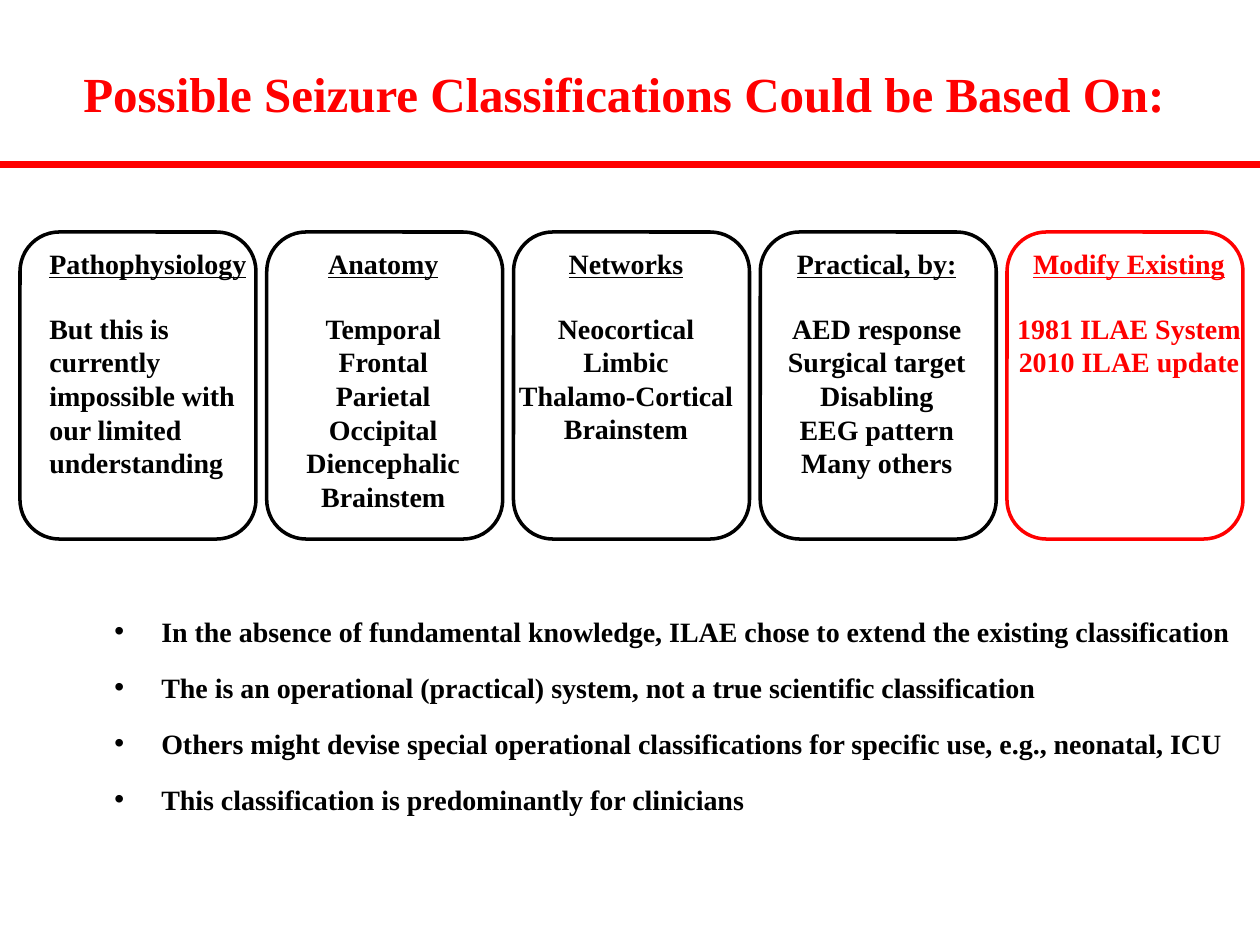
from lxml.etree import SubElement
from pptx import Presentation
from pptx.dml.color import RGBColor
from pptx.enum.shapes import MSO_SHAPE as Shape
from pptx.enum.text import MSO_AUTO_SIZE as AutoSize, PP_ALIGN as Align
from pptx.oxml.ns import qn
from pptx.util import Pt

PX = 914400 / 126
RED = RGBColor(255, 0, 0)
BLACK = RGBColor(0, 0, 0)
FONT = "Times New Roman"

CARD_TOP, CARD_W, CARD_H = 232, 236, 307
FIRST_CARD, CARD_STEP = 20, 246.75

# heading, lines, colour, alignment, text offset in the card, text width, text height
CARDS = [
    ("Pathophysiology",
     ["But this is", "currently", "impossible with", "our limited", "understanding"],
     BLACK, Align.LEFT, 17, 226, 248),
    ("Anatomy",
     ["Temporal", "Frontal", "Parietal", "Occipital", "Diencephalic", "Brainstem"],
     BLACK, Align.CENTER, 26, 181, 282),
    ("Networks",
     ["Neocortical", "Limbic", "Thalamo-Cortical", "Brainstem"],
     BLACK, Align.CENTER, -9, 243, 214),
    ("Practical, by:",
     ["AED response", "Surgical target", "Disabling", "EEG pattern", "Many others"],
     BLACK, Align.CENTER, 14, 205, 248),
    ("Modify Existing",
     ["1981 ILAE System", "2010 ILAE update"],
     RED, Align.CENTER, -4, 252, 146),
]

CONCLUSIONS = [
    "In the absence of fundamental knowledge, ILAE chose to extend the existing classification",
    "The is an operational (practical) system, not a true scientific classification",
    "Others might devise special operational classifications for specific use, e.g., neonatal, ICU",
    "This classification is predominantly for clinicians",
]


def emu(*lengths):
    return [round(length * PX) for length in lengths]


def add_frame(slide, left, top, width, height, wrap=False):
    frame = slide.shapes.add_textbox(*emu(left, top, width, height)).text_frame
    frame.word_wrap = wrap
    frame.auto_size = AutoSize.SHAPE_TO_FIT_TEXT
    return frame


def add_line(frame, text, size, colour, align=Align.LEFT, underline=False):
    first = frame.paragraphs[0]
    line = frame.add_paragraph() if first.runs else first
    line.alignment = align
    run = line.add_run()
    run.text = text
    font = run.font
    font.name, font.size, font.bold = FONT, Pt(size), True
    font.underline = underline
    font.color.rgb = colour
    return line


def add_title(slide, left, top, width, height):
    # Title
    title = add_frame(slide, left, top, width, height)
    add_line(title, "Possible Seizure Classifications Could be Based On:", 28, RED)


def add_rule(slide, left, top, width, height):
    # Full-width bar under the title
    rule = slide.shapes.add_shape(Shape.RECTANGLE, *emu(left, top, width, height))
    rule.shadow.inherit = False
    rule.fill.solid()
    rule.fill.fore_color.rgb = RED
    rule.line.fill.background()


def add_card(slide, left, top, width, height, card):
    heading, lines, colour, align, offset, text_width, text_height = card
    # Outline
    outline = slide.shapes.add_shape(Shape.ROUNDED_RECTANGLE, *emu(left, top, width, height))
    outline.shadow.inherit = False
    outline.fill.background()
    outline.line.color.rgb = colour
    outline.line.width = Pt(2)
    # Heading and its entries
    content = add_frame(slide, left + offset, top + 8, text_width, text_height)
    add_line(content, heading, 16, colour, align, underline=True)
    entries = [add_line(content, text, 16, colour, align) for text in lines]
    entries[0].space_before = Pt(18)


def add_conclusions(slide, left, top, width, height):
    # Bulleted conclusions
    conclusions = add_frame(slide, left, top, width, height)
    indent, = emu(47)
    for text in CONCLUSIONS:
        line = add_line(conclusions, text, 16, BLACK)
        line.line_spacing = Pt(32)
        properties = line._p.get_or_add_pPr()
        properties.set("marL", str(indent))
        properties.set("indent", str(-indent))
        SubElement(properties, qn("a:buFont"), typeface="Arial")
        SubElement(properties, qn("a:buChar"), char="•")


def main():
    deck = Presentation()
    deck.slide_width, deck.slide_height = emu(1260, 945)
    slide = deck.slides.add_slide(deck.slide_layouts[6])
    add_title(slide, 71, 57, 1119, 72)
    add_rule(slide, 0, 161, 1260, 7)
    for index, card in enumerate(CARDS):
        add_card(slide, FIRST_CARD + index * CARD_STEP, CARD_TOP, CARD_W, CARD_H, card)
    add_conclusions(slide, 102, 586, 1149, 239)
    deck.save("out.pptx")


if __name__ == "__main__":
    main()
